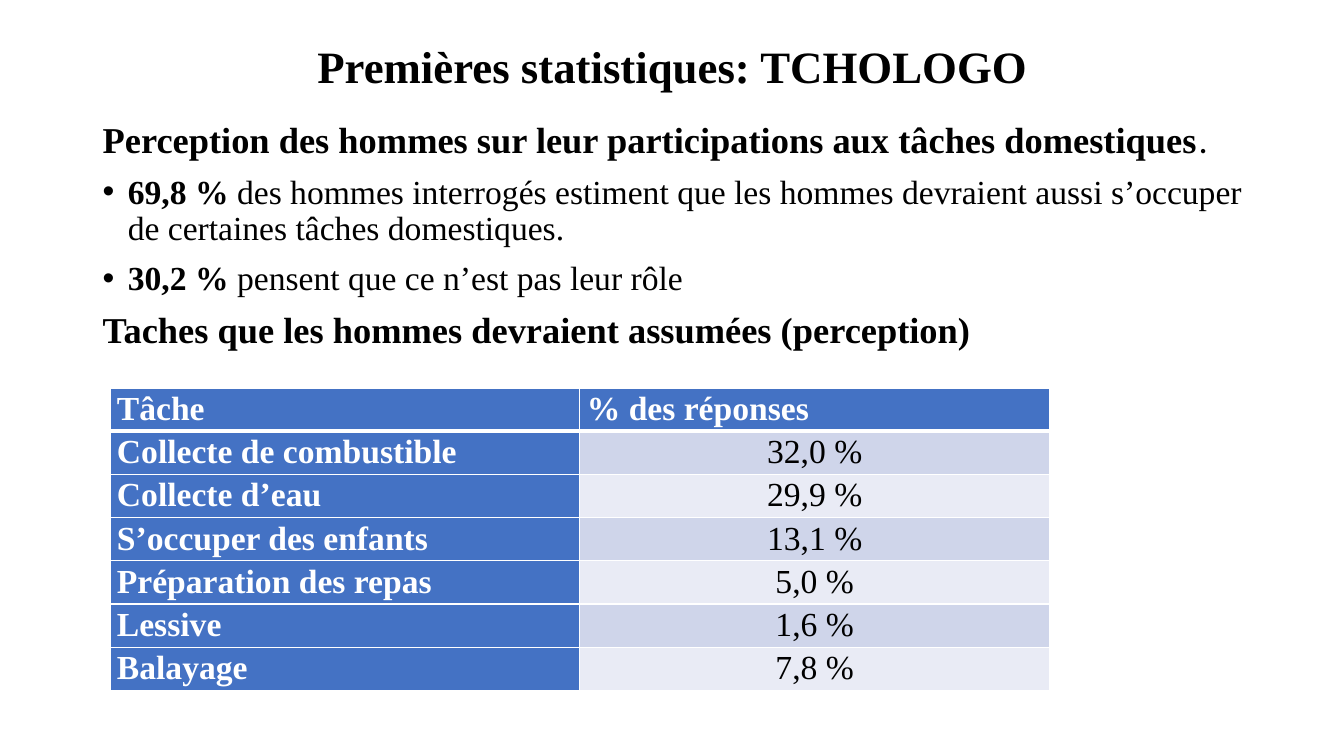
from lxml.etree import SubElement
from pptx import Presentation
from pptx.dml.color import RGBColor
from pptx.enum.text import MSO_ANCHOR, MSO_AUTO_SIZE, PP_ALIGN
from pptx.oxml import parse_xml
from pptx.oxml.ns import nsdecls, qn
from pptx.util import Inches, Pt

SERIF = "Times New Roman"
BLACK, WHITE, BLUE = "000000", "FFFFFF", "4472C4"
BANDS = ("CFD5EA", "E9EBF5")

HEADER = ("Tâche", "% des réponses")
TASKS = [
    ("Collecte de combustible", "32,0 %"),
    ("Collecte d’eau", "29,9 %"),
    ("S’occuper des enfants", "13,1 %"),
    ("Préparation des repas", "5,0 %"),
    ("Lessive", "1,6 %"),
    ("Balayage", "7,8 %"),
]


def color(value):
    """Return the RGB colour for a hex string."""
    return RGBColor.from_string(value)


def add_span(para, text, size, bold=False, ink=BLACK, font=SERIF):
    """Append one formatted run to a paragraph."""
    span = para.add_run()
    span.text = text
    span.font.name = font
    span.font.size = Pt(size)
    span.font.bold = bold
    span.font.color.rgb = color(ink)


def set_title(page, text):
    """Place and format the title placeholder."""
    title = page.shapes.title
    title.left, title.top = Inches(0.92), Inches(0.4)
    title.width, title.height = Inches(11.5), Inches(0.56)
    frame = title.text_frame
    frame.word_wrap = True
    frame.auto_size = MSO_AUTO_SIZE.NONE
    frame.vertical_anchor = MSO_ANCHOR.MIDDLE
    para = frame.paragraphs[0]
    para.alignment = PP_ALIGN.CENTER
    para.line_spacing = 0.9
    add_span(para, text, 32, True)


def add_body(page):
    """Add the text box that holds headings and bullets and return its frame."""
    box = page.shapes.add_textbox(Inches(0.92), Inches(1.16), Inches(11.5), Inches(6.05))
    box.text_frame.word_wrap = True
    return box.text_frame


def next_para(frame):
    """Return the empty first paragraph or a new one, with body spacing."""
    first = frame.paragraphs[0]
    para = frame.add_paragraph() if first.runs else first
    para.line_spacing = 0.9
    para.space_before = Pt(10)
    return para


def add_heading(frame, text):
    """Add a bold heading paragraph and return it."""
    para = next_para(frame)
    add_span(para, text, 26, True)
    return para


def add_bullet(frame, share, statement):
    """Add a bullet with a bold share followed by its statement."""
    para = next_para(frame)
    properties = para._p.get_or_add_pPr()
    properties.set("marL", str(Inches(0.25)))
    properties.set("indent", str(Inches(-0.25)))
    SubElement(properties, qn("a:buFont"), typeface="Arial")
    SubElement(properties, qn("a:buChar"), char="•")
    add_span(para, share, 24, True)
    add_span(para, statement, 24)


def set_borders(cell, bottom):
    """Draw white cell borders with the given bottom width in points."""
    properties = cell._tc.get_or_add_tcPr()
    sides = (("lnL", 1), ("lnR", 1), ("lnT", 1), ("lnB", bottom))
    for index, (side, width) in enumerate(sides):
        properties.insert(index, parse_xml(
            f'<a:{side} {nsdecls("a")} w="{Pt(width)}"><a:solidFill>'
            f'<a:srgbClr val="{WHITE}"/></a:solidFill></a:{side}>'))


def fill_cell(cell, text, fill, label, bottom=1):
    """Write one table cell, as a white label or a centred value."""
    cell.margin_left = cell.margin_right = Inches(0.07)
    cell.margin_top = cell.margin_bottom = Inches(0)
    cell.fill.solid()
    cell.fill.fore_color.rgb = color(fill)
    set_borders(cell, bottom)
    para = cell.text_frame.paragraphs[0]
    para.alignment = PP_ALIGN.JUSTIFY if label else PP_ALIGN.CENTER
    para.line_spacing = 1.07
    para.space_after = Pt(8)
    add_span(para, text, 24, label, WHITE if label else BLACK)


def add_task_table(page):
    """Add the table of tasks and their shares of answers."""
    holder = page.shapes.add_table(
        len(TASKS) + 1, 2, Inches(1.09), Inches(3.85), Inches(9.32), Inches(2.79))
    table = holder.table
    for row in table.rows:
        row.height = Inches(0.37)
    holder.height = Inches(2.79)
    for column, text in enumerate(HEADER):
        fill_cell(table.cell(0, column), text, BLUE, True, 3)
    for index, (task, share) in enumerate(TASKS):
        fill_cell(table.cell(index + 1, 0), task, BLUE, True)
        fill_cell(table.cell(index + 1, 1), share, BANDS[index % 2], False)


def main():
    """Build the slide and save the deck."""
    deck = Presentation()
    deck.slide_width, deck.slide_height = Inches(13.33), Inches(7.5)
    page = deck.slides.add_slide(deck.slide_layouts[5])
    set_title(page, "Premières statistiques: TCHOLOGO")
    frame = add_body(page)
    heading = add_heading(
        frame, "Perception des hommes sur leur participations aux tâches domestiques")
    add_span(heading, ".", 26, font="Calibri")
    add_bullet(frame, "69,8 %", " des hommes interrogés estiment que les hommes "
               "devraient aussi s’occuper de certaines tâches domestiques.")
    add_bullet(frame, "30,2 %", " pensent que ce n’est pas leur rôle")
    add_heading(frame, "Taches que les hommes devraient assumées (perception)")
    add_task_table(page)
    deck.save("out.pptx")


if __name__ == "__main__":
    main()
